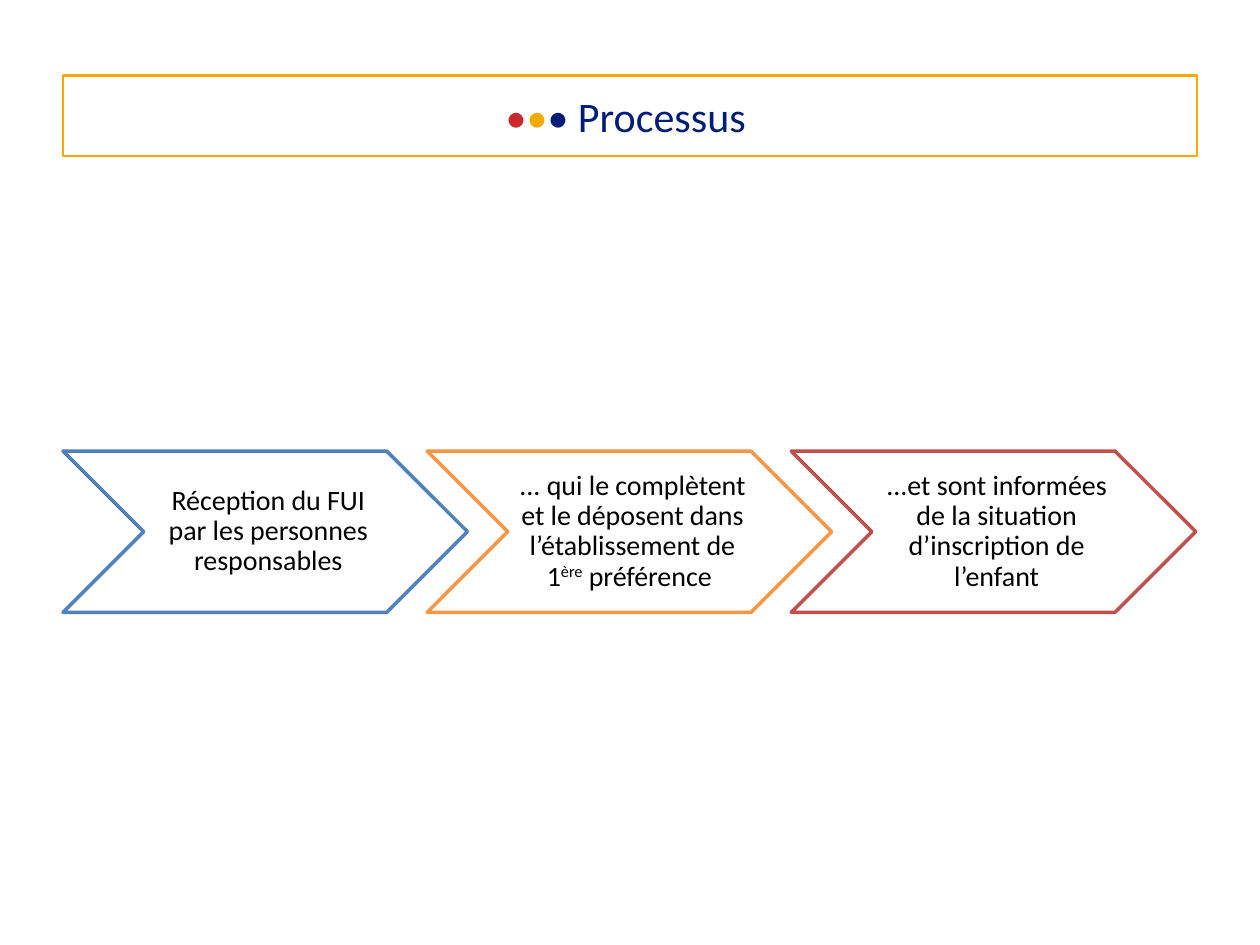
import pptx
import pptx.dml.color
import pptx.enum.shapes
import pptx.enum.text
import pptx.util
from pptx.util import Inches, Pt

SHAPES = pptx.enum.shapes.MSO_SHAPE
BLACK, GOLD = "000000", "F4AA00"

# Each run: text, colour, superscript
TITLE = [("•", "C9282D", False), ("•", GOLD, False), ("• Processus\u2009", "001D77", False)]
STEPS = [
    ("4F81BD", [("Réception du FUI par les personnes responsables", BLACK, False)]),
    ("F79646", [("... qui le complètent et le déposent dans l’établissement de 1", BLACK, False),
                ("ère", BLACK, True),
                (" préférence ", BLACK, False)]),
    ("C0504D", [("...et sont informées de la situation d’inscription de l’enfant", BLACK, False)]),
]

LEFT = 0.5
STEP_TOP, STEP_WIDTH, STEP_HEIGHT, STEP_PITCH = 3.58, 3.21, 1.28, 2.89
STEP_MARGINS = {"margin_left": Inches(0.07), "margin_right": Inches(0.02),
                "margin_top": Inches(0.02), "margin_bottom": Inches(0.02)}


def rgb(value):
    return pptx.dml.color.RGBColor.from_string(value)


def add_outlined(slide, kind, box, line_color, line_width):
    shape = slide.shapes.add_shape(kind, *map(Inches, box))
    shape.shadow.inherit = False
    shape.fill.solid()
    shape.fill.fore_color.rgb = rgb("FFFFFF")
    shape.line.color.rgb = rgb(line_color)
    shape.line.width = Pt(line_width)
    return shape


def write(shape, runs, size, frame_format, paragraph_format):
    frame = shape.text_frame
    paragraph = frame.paragraphs[0]
    frame_format = {"word_wrap": True,
                    "vertical_anchor": pptx.enum.text.MSO_ANCHOR.MIDDLE, **frame_format}
    paragraph_format = {"alignment": pptx.enum.text.PP_ALIGN.CENTER, **paragraph_format}
    for target, values in ((frame, frame_format), (paragraph, paragraph_format)):
        for name, value in values.items():
            setattr(target, name, value)
    for text, color, superscript in runs:
        run = paragraph.add_run()
        run.text = text
        run.font.name = "Calibri"
        run.font.size = Pt(size)
        run.font.color.rgb = rgb(color)
        if superscript:
            run.font._element.set("baseline", "30000")


presentation = pptx.Presentation()
presentation.slide_width, presentation.slide_height = Inches(10), Inches(7.5)
slide = presentation.slides.add_slide(presentation.slide_layouts[6])

for index, (color, runs) in enumerate(STEPS):
    box = (LEFT + index * STEP_PITCH, STEP_TOP, STEP_WIDTH, STEP_HEIGHT)
    step = add_outlined(slide, SHAPES.CHEVRON, box, color, 2)
    write(step, runs, 16, STEP_MARGINS, {"line_spacing": 0.9})

title = add_outlined(slide, SHAPES.RECTANGLE, (LEFT, 0.6, 9, 0.64), GOLD, 1.5)
write(title, TITLE, 24, {}, {"space_before": Pt(2.5)})

presentation.save("out.pptx")
